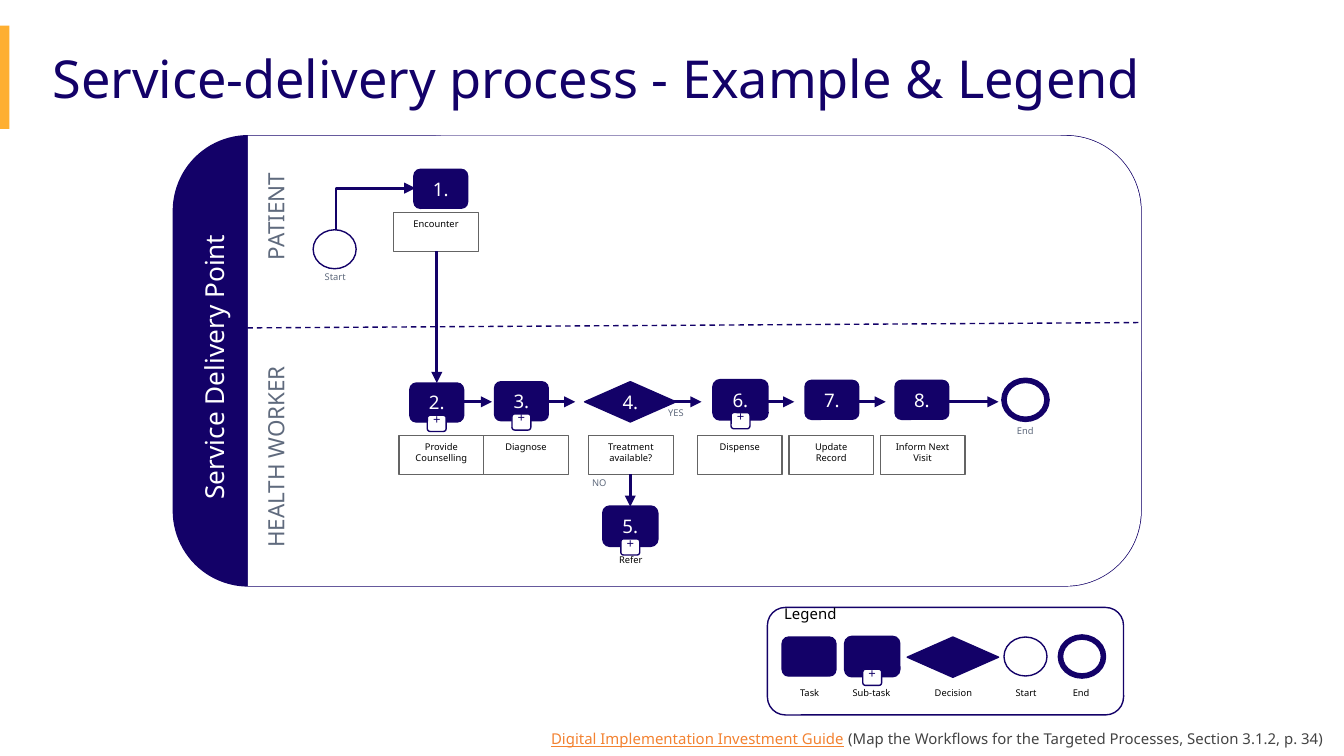
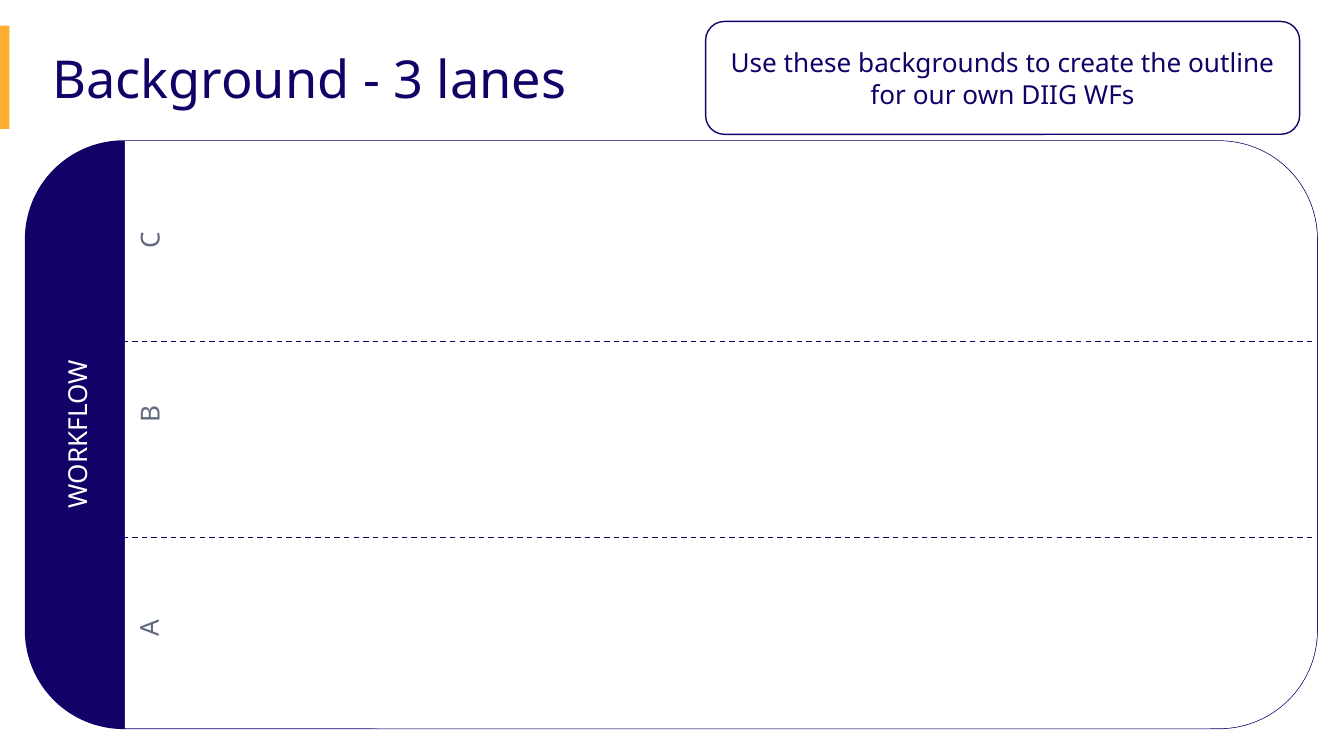
from pptx import Presentation
from pptx.dml.color import RGBColor
from pptx.enum.dml import MSO_LINE
from pptx.enum.shapes import MSO_CONNECTOR, MSO_SHAPE
from pptx.enum.text import MSO_ANCHOR, MSO_AUTO_SIZE, PP_ALIGN
from pptx.oxml.ns import qn
from pptx.util import Inches, Pt
from lxml.etree import SubElement

PX = 9144
FONT = "Noto Sans"
COLORS = {"navy": "130168", "amber": "FEAF31", "orange": "F38231", "slate": "5F6A7D",
          "gray": "646464", "dark": "434343", "white": "FFFFFF", "black": "000000"}

TITLES = ["Service-delivery process - Example & Legend", "Background - 3 lanes"]
SOURCE = [("Digital Implementation Investment Guide", "orange", True),
          (" (Map the Workflows for the Targeted Processes, Section 3.1.2, p. 34)", "dark", False)]
CALLOUT = "Use these backgrounds to create the outline for our own DIIG WFs"

PROCESS_PANEL = (129, 101, 720, 335)
PROCESS_LANES = [("Service Delivery Point", (27, 251, 264, 44), 14, "white"),
                 ("PATIENT", (145, 141, 120, 40), 12, "slate"),
                 ("HEALTH WORKER", (94, 320, 222, 40), 12, "slate")]
LANES_PANEL = (19, 105, 961, 437)
LANES = [("WORKFLOW", (-39, 301, 192, 44), 14, "white"),
         ("C", (38, 157, 146, 44), 14, "slate"),
         ("B", (70, 286, 82, 44), 14, "slate"),
         ("A", (52, 445, 117, 44), 14, "slate")]
LANE_DIVIDERS = [254, 400]

STEPS = [("1.", "task", 308, 126, 0.75), ("2.", "subtask", 305, 285, 0.75),
         ("3.", "subtask", 368, 284, 0.75), ("4.", "decision", 435, 284, 0.75),
         ("5.", "subtask", 449, 377, 1.5), ("6.", "subtask", 531, 283, 1.5),
         ("7.", "task", 599, 283, 0.75), ("8.", "task", 666, 283, 0.75)]
CAPTIONS = [("Encounter", 293, 158), ("Provide Counselling", 297, 324), ("Diagnose", 360, 324),
            ("Treatment available?", 438, 324), ("Dispense", 519, 324),
            ("Update Record", 587, 324), ("Inform Next Visit", 655, 324)]
LABELS = [("Start", 226, 198, 47, "slate"), ("End", 745, 312, 36, "slate"),
          ("YES", 485, 299, 36, "slate"), ("NO", 428, 351, 36, "slate"),
          ("Refer", 438, 408, 63, "black")]
FLOW_Y = 299
FLOW_ARROWS = [(345, 366), (408, 428), (501, 522), (571, 591), (639, 659), (706, 743)]
DOWN_ARROWS = [(325, 187, 285), (469, 353, 377)]
LEGEND_Y = 474
LEGEND = [("Task", "task", 582, 571, 0.75), ("Sub-task", "subtask", 629, 617, 1.5),
          ("Decision", "decision", 675, 678, 0.75), ("Start", "event", 747, 732, 0.75),
          ("End", "event", 789, 773, 3)]
SYMBOLS = {"task": (MSO_SHAPE.ROUNDED_RECTANGLE, 40, 29, "navy"),
           "subtask": (MSO_SHAPE.ROUNDED_RECTANGLE, 40, 29, "navy"),
           "decision": (MSO_SHAPE.DIAMOND, 68, 30, "navy"),
           "event": (MSO_SHAPE.OVAL, 32, 29, None)}


def rgb(name):
    return RGBColor.from_string(COLORS[name])


def emu(*values):
    return [round(v * PX) for v in values]


def style_run(r, size, color, underline=None):
    r.font.name, r.font.size, r.font.color.rgb = FONT, Pt(size), rgb(color)
    r.font.underline = underline


def write(sp, text, size, color, align=PP_ALIGN.CENTER, anchor=MSO_ANCHOR.MIDDLE,
          margins=(10, 10, 10, 10)):
    tf = sp.text_frame
    tf.text = text
    tf.word_wrap, tf.auto_size, tf.vertical_anchor = True, MSO_AUTO_SIZE.NONE, anchor
    tf.margin_left, tf.margin_top, tf.margin_right, tf.margin_bottom = emu(*margins)
    p = tf.paragraphs[0]
    p.alignment = align
    for r in p.runs:
        style_run(r, size, color)
    return p


def shape(s, kind, box, fill=None, line=None, weight=0.75):
    sp = s.shapes.add_shape(kind, *emu(*box))
    sp.shadow.inherit = False
    if kind == MSO_SHAPE.ROUNDED_RECTANGLE:
        sp.adjustments[0] = 0.167
    if fill:
        sp.fill.solid()
        sp.fill.fore_color.rgb = rgb(fill)
    else:
        sp.fill.background()
    if line:
        sp.line.color.rgb, sp.line.width = rgb(line), Pt(weight)
    else:
        sp.line.fill.background()
    return sp


def label(s, text, box, size, color):
    sp = s.shapes.add_textbox(*emu(*box))
    write(sp, text, size, color, anchor=MSO_ANCHOR.TOP, margins=(10, 4, 10, 0))


def connect(s, points, weight=1.5, kind=MSO_CONNECTOR.STRAIGHT, arrow=True):
    c = s.shapes.add_connector(kind, *emu(*points))
    c.line.color.rgb, c.line.width = rgb("navy"), Pt(weight)
    if arrow:
        SubElement(c.line._get_or_add_ln(), qn("a:tailEnd"), type="triangle")
    else:
        c.line.dash_style = MSO_LINE.DASH
    SubElement(c._element.spPr, qn("a:effectLst"))
    return c


def new_slide(prs, title):
    s = prs.slides.add_slide(prs.slide_layouts[5])
    shape(s, MSO_SHAPE.RECTANGLE, (0, 19, 7, 77), "amber")
    sp = s.shapes.title
    sp.left, sp.top, sp.width, sp.height = emu(29, 24, 920, 68)
    write(sp, title, 28, "navy", PP_ALIGN.LEFT)
    return s


def panel(s, box):
    x, y, w, h = box
    shape(s, MSO_SHAPE.ROUNDED_RECTANGLE, box, "navy", "navy")
    shape(s, MSO_SHAPE.RECTANGLE, (x + 0.077 * w, y, 0.84 * w, h), "white")
    shape(s, MSO_SHAPE.ROUNDED_RECTANGLE, (x + 0.2 * w, y, 0.8 * w, h), "white")


def lane_labels(s, lanes):
    for text, box, size, color in lanes:
        sp = s.shapes.add_textbox(*emu(*box))
        sp.rotation = 270
        write(sp, text, size, color)


def symbol(s, name, x, y, weight, text=""):
    kind, w, h, fill = SYMBOLS[name]
    sp = shape(s, kind, (x, y, w, h), fill, "navy", weight)
    if text:
        write(sp, text, 10, "white")
    if name == "subtask":
        shape(s, MSO_SHAPE.ROUNDED_RECTANGLE, (x + 13, y + 24, 14, 12), "white", "navy")
        label(s, "+", (x + 7, y + 17, 26, 32), 7, "navy")


def process_slide(prs):
    s = new_slide(prs, TITLES[0])
    panel(s, PROCESS_PANEL)
    connect(s, (184, 244, 847, 240), 0.75, arrow=False)
    lane_labels(s, PROCESS_LANES)

    for text, x, y in CAPTIONS:
        sp = shape(s, MSO_SHAPE.RECTANGLE, (x, y, 63, 29), line="gray")
        write(sp, text, 5, "black", anchor=MSO_ANCHOR.TOP, margins=(10, 4, 10, 0))
    for x1, x2 in FLOW_ARROWS:
        connect(s, (x1, FLOW_Y, x2, FLOW_Y))
    for x, y1, y2 in DOWN_ARROWS:
        connect(s, (x, y1, x, y2))
    bend = connect(s, (264, 126, 295, 185), kind=MSO_CONNECTOR.ELBOW)
    bend._element.spPr.prstGeom.set("prst", "bentConnector2")
    bend._element.spPr.xfrm.set("rot", "16200000")

    for text, name, x, y, weight in STEPS:
        symbol(s, name, x, y, weight, text)
    symbol(s, "event", 233, 171, 0.75)
    symbol(s, "event", 747, 283, 3)
    for text, x, y, w, color in LABELS:
        label(s, text, (x, y, w, 29), 5, color)

    shape(s, MSO_SHAPE.ROUNDED_RECTANGLE, (571, 452, 265, 80), line="navy")
    label(s, "Legend", (567, 446, 72, 34), 8, "black")
    for text, name, x, label_x, weight in LEGEND:
        symbol(s, name, x, LEGEND_Y, weight)
        label(s, text, (label_x, 507, 63, 29), 5, "black")

    sp = s.shapes.add_textbox(*emu(372, 526, 623, 34))
    p = write(sp, "", 8, "dark", PP_ALIGN.RIGHT, MSO_ANCHOR.TOP)
    p.line_spacing = 1.5
    for text, color, underline in SOURCE:
        r = p.add_run()
        r.text = text
        style_run(r, 8, color, underline)


def lanes_slide(prs):
    s = new_slide(prs, TITLES[1])
    sp = shape(s, MSO_SHAPE.ROUNDED_RECTANGLE, (525, 16, 442, 84), line="navy")
    write(sp, CALLOUT, 14, "navy")
    panel(s, LANES_PANEL)
    for y in LANE_DIVIDERS:
        connect(s, (84, y, 980, y), 0.75, arrow=False)
    lane_labels(s, LANES)


def main():
    prs = Presentation()
    prs.slide_width = Inches(10)
    prs.slide_height = prs.slide_width * 9 // 16
    process_slide(prs)
    lanes_slide(prs)
    prs.save("out.pptx")


if __name__ == "__main__":
    main()
